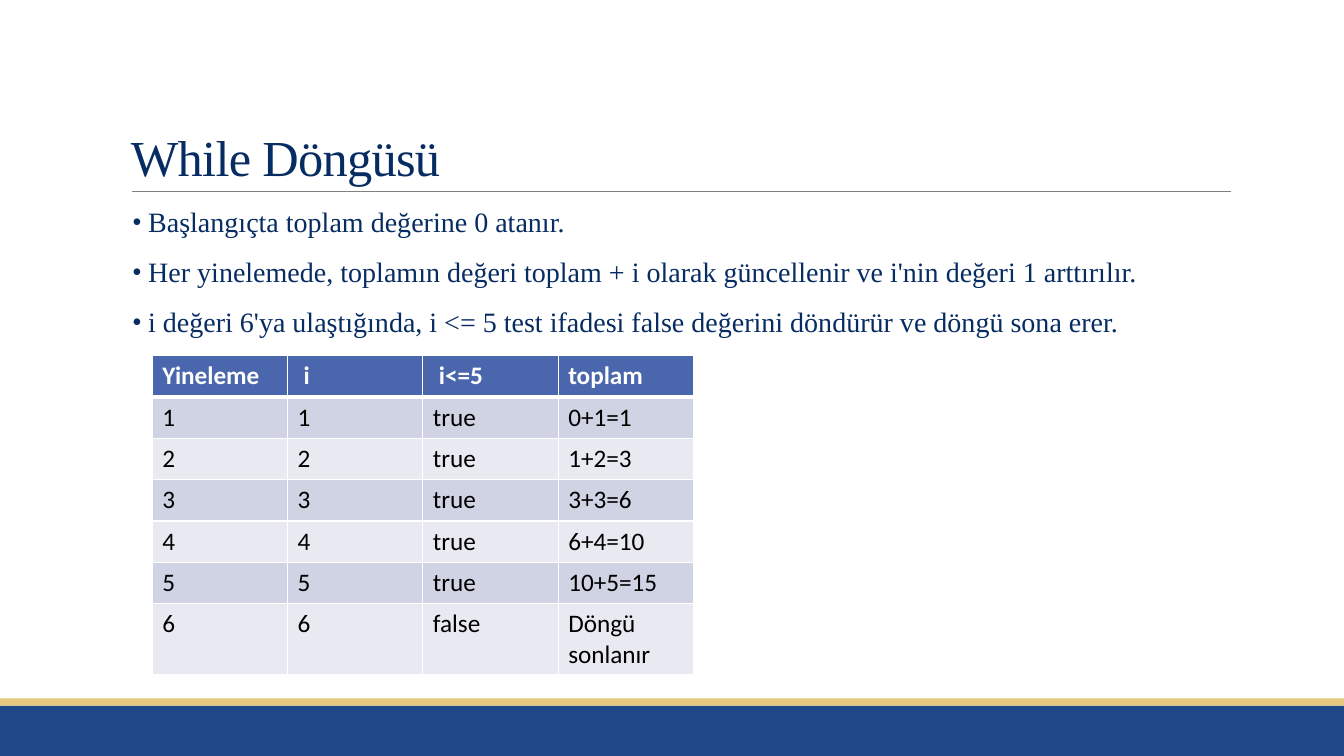
from lxml import etree
from pptx import Presentation
from pptx import util as u
from pptx.dml.color import RGBColor
from pptx.enum import shapes, text
from pptx.oxml import ns

NAVY = "072C62"
BLUE = "4A66AC"
WHITE = "FFFFFF"
POINTS = [
    "Başlangıçta toplam değerine 0 atanır.",
    "Her yinelemede, toplamın değeri toplam + i olarak güncellenir ve i'nin değeri 1 arttırılır.",
    "i değeri 6'ya ulaştığında, i <= 5 test ifadesi false değerini döndürür ve döngü sona erer.",
]
HEADS = ["Yineleme", "i", "i<=5", "toplam"]
SUMS = ["0+1=1", "1+2=3", "3+3=6", "6+4=10", "10+5=15", "Döngü sonlanır"]


def color(code):
    return RGBColor.from_string(code)


def apply(item, values):
    for name, value in values.items():
        setattr(item, name, value)


def child(parent, tag, **attrs):
    return etree.SubElement(parent, ns.qn(tag), attrs)


class Deck:
    head = {"name": "Times New Roman", "size": u.Pt(36)}
    body = {"name": "Times New Roman", "size": u.Pt(20)}
    cell = {"name": "Calibri", "size": u.Pt(18)}

    def __init__(self, slide):
        self.slide = slide

    def bar(self, top, height, fill):
        box = self.slide.shapes.add_shape(
            shapes.MSO_SHAPE.RECTANGLE, 0, u.Inches(top), u.Inches(13.33), u.Inches(height))
        box.shadow.inherit = False
        box.fill.solid()
        box.fill.fore_color.rgb = color(fill)
        box.line.fill.background()

    def rule(self, left, right, top):
        line = self.slide.shapes.add_connector(
            shapes.MSO_CONNECTOR.STRAIGHT, u.Inches(left), u.Inches(top), u.Inches(right), u.Inches(top))
        line.line.color.rgb = color("808080")
        line.line.width = u.Pt(0.5)
        child(line._element.spPr, "a:effectLst")

    def frame(self, top, height, **values):
        box = self.slide.shapes.add_textbox(
            u.Inches(1.2), u.Inches(top), u.Inches(11), u.Inches(height))
        apply(box.text_frame, {"word_wrap": True, **values})
        return box.text_frame

    def style(self, para, font, fill):
        apply(para.font, font)
        para.font.color.rgb = color(fill)

    def title(self, words):
        frame = self.frame(0.31, 1.59, vertical_anchor=text.MSO_ANCHOR.BOTTOM)
        para = frame.paragraphs[0]
        run = para.add_run()
        run.text = words
        run._r.get_or_add_rPr().set("spc", "-50")
        para.line_spacing = 0.85
        self.style(para, self.head, NAVY)

    def bullets(self, lines):
        frame = self.frame(2.02, 4.4, margin_left=0, margin_right=0)
        for index, words in enumerate(lines):
            para = frame.paragraphs[0] if index == 0 else frame.add_paragraph()
            para.text = words
            apply(para, {"line_spacing": 0.9, "space_after": u.Pt(2),
                         "space_before": u.Pt(12 if index else 0)})
            props = para._p.get_or_add_pPr()
            props.set("marL", str(u.Inches(0.27)))
            props.set("indent", str(u.Inches(-0.16)))
            child(props, "a:buFont", typeface="Times New Roman")
            child(props, "a:buChar", char="•")
            self.style(para, self.body, NAVY)

    def edges(self, cell, top, bottom):
        props = cell._tc.get_or_add_tcPr()
        for index, (side, width) in enumerate(zip("LRTB", (1, 1, top, bottom))):
            line = etree.Element(ns.qn(f"a:ln{side}"), w=str(u.Pt(width)))
            child(child(line, "a:solidFill"), "a:srgbClr", val=WHITE)
            props.insert(index, line)

    def table(self, rows):
        grid = self.slide.shapes.add_table(
            len(rows), len(rows[0]), u.Inches(1.51), u.Inches(3.53), u.Inches(5.37), u.Inches(3.13)).table
        for row in grid.rows:
            row.height = u.Inches(0.41)
        grid.rows[len(rows) - 1].height = u.Inches(0.67)
        for r, row in enumerate(rows):
            for c, words in enumerate(row):
                cell = grid.cell(r, c)
                cell.text = words
                cell.margin_left = u.Inches(0.16 if r == 0 and c in (1, 2) else 0.1)
                cell.fill.solid()
                fill = BLUE if r == 0 else ("E9EAF1", "D0D3E3")[r % 2]
                cell.fill.fore_color.rgb = color(fill)
                self.edges(cell, 3 if r == 1 else 1, 3 if r == 0 else 1)
                self.style(cell.text_frame.paragraphs[0], {**self.cell, "bold": r == 0},
                           "000000" if r else WHITE)


def main():
    show = Presentation()
    apply(show, {"slide_width": u.Inches(13.33), "slide_height": u.Inches(7.5)})
    deck = Deck(show.slides.add_slide(show.slide_layouts[6]))
    deck.bar(7, 0.5, "204788")
    deck.bar(6.93, 0.07, "E5C77D")
    deck.rule(1.31, 12.21, 1.9)
    deck.title("While Döngüsü")
    deck.bullets(POINTS)
    rows = [[str(i), str(i), "true" if i <= 5 else "false", total]
            for i, total in enumerate(SUMS, 1)]
    deck.table([HEADS] + rows)
    show.save("out.pptx")


if __name__ == "__main__":
    main()
